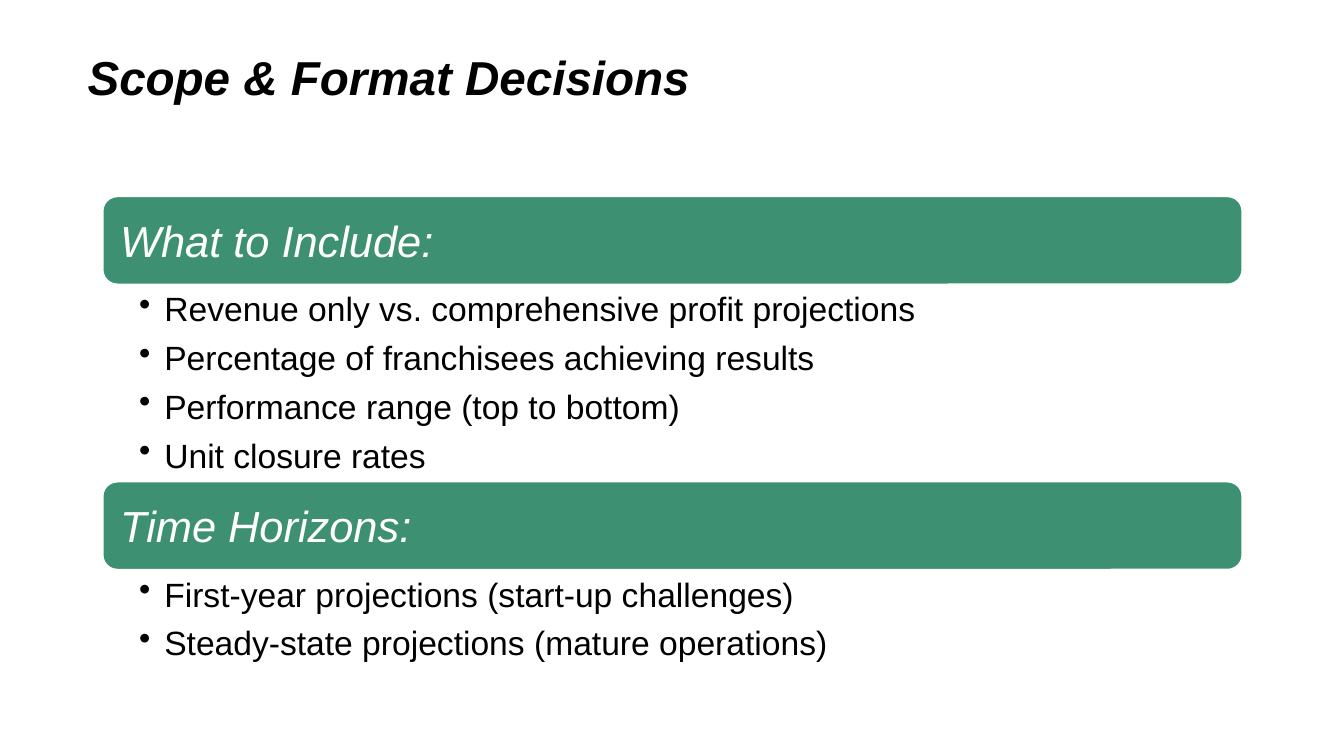
from lxml import etree
from pptx import Presentation
from pptx.dml.color import RGBColor
from pptx.enum.shapes import MSO_SHAPE as Shape
from pptx.enum.text import MSO_ANCHOR as Anchor, PP_ALIGN as Align
from pptx.oxml.ns import qn
from pptx.util import Inches, Pt

TITLE = "Scope & Format Decisions"
SECTIONS = [
    ("What to Include:", 1.96, [
        "Revenue only vs. comprehensive profit projections",
        "Percentage of franchisees achieving results",
        "Performance range (top to bottom)",
        "Unit closure rates",
    ]),
    ("Time Horizons:", 1.0, [
        "First-year projections (start-up challenges)",
        "Steady-state projections (mature operations)",
    ]),
]

GREEN = RGBColor(0x3D, 0x90, 0x72)
WHITE = RGBColor(0xFF, 0xFF, 0xFF)
BLACK = RGBColor(0, 0, 0)

TITLE_FONT = {"size": Pt(34), "bold": True, "italic": True}
HEADING_FONT = {"size": Pt(31), "italic": True}
BULLET_FONT = {"size": Pt(24)}

LEFT, TOP, WIDTH, BAR_HEIGHT = 1.02, 1.95, 11.3, 0.87
INDENT = 0.25


def write(shape, lines, font, color, anchor, insets):
    """Fill a shape with one paragraph per line; insets are left, top, right, bottom."""
    tf = shape.text_frame
    tf.word_wrap = True
    tf.vertical_anchor = anchor
    for side, inset in zip(("left", "top", "right", "bottom"), insets):
        setattr(tf, f"margin_{side}", Inches(inset))
    for i, line in enumerate(lines):
        p = tf.paragraphs[0] if i == 0 else tf.add_paragraph()
        p.alignment = Align.LEFT
        r = p.add_run()
        r.text = line
        r.font.name = "Arial"
        r.font.color.rgb = color
        for name, value in font.items():
            setattr(r.font, name, value)
    return tf.paragraphs


def add_bullet(p):
    p.level = 1
    p.space_after = Pt(6)
    pPr = p._p.get_or_add_pPr()
    pPr.set("marL", str(Inches(INDENT)))
    pPr.set("indent", str(-Inches(INDENT)))
    etree.SubElement(pPr, qn("a:buChar")).set("char", "•")


def add_text_box(s, *box):
    return s.shapes.add_textbox(*map(Inches, box))


def add_bar(s, heading, y):
    bar = s.shapes.add_shape(
        Shape.ROUNDED_RECTANGLE, *map(Inches, (LEFT, y, WIDTH, BAR_HEIGHT)))
    bar.shadow.inherit = False
    bar.fill.solid()
    bar.fill.fore_color.rgb = GREEN
    bar.line.color.rgb = WHITE
    bar.line.width = Pt(1)
    write(bar, [heading], HEADING_FONT, WHITE, Anchor.MIDDLE, [0.13] * 4)


def main():
    prs = Presentation()
    prs.slide_width, prs.slide_height = Inches(13.33), Inches(7.5)
    s = prs.slides.add_slide(prs.slide_layouts[6])

    title = add_text_box(s, 0.77, 0.17, 12.08, 1.24)
    write(title, [TITLE], TITLE_FONT, BLACK, Anchor.MIDDLE,
          (0.1, 0.05, 0.1, 0.05))[0].line_spacing = 0.9

    y = TOP
    for heading, height, bullets in SECTIONS:
        add_bar(s, heading, y)
        y += BAR_HEIGHT
        body = add_text_box(s, LEFT, y, WIDTH, height)
        for p in write(body, bullets, BULLET_FONT, BLACK, Anchor.TOP,
                       (0.36, 0.04, 0.24, 0.04)):
            add_bullet(p)
        y += height

    prs.save("out.pptx")


if __name__ == "__main__":
    main()
